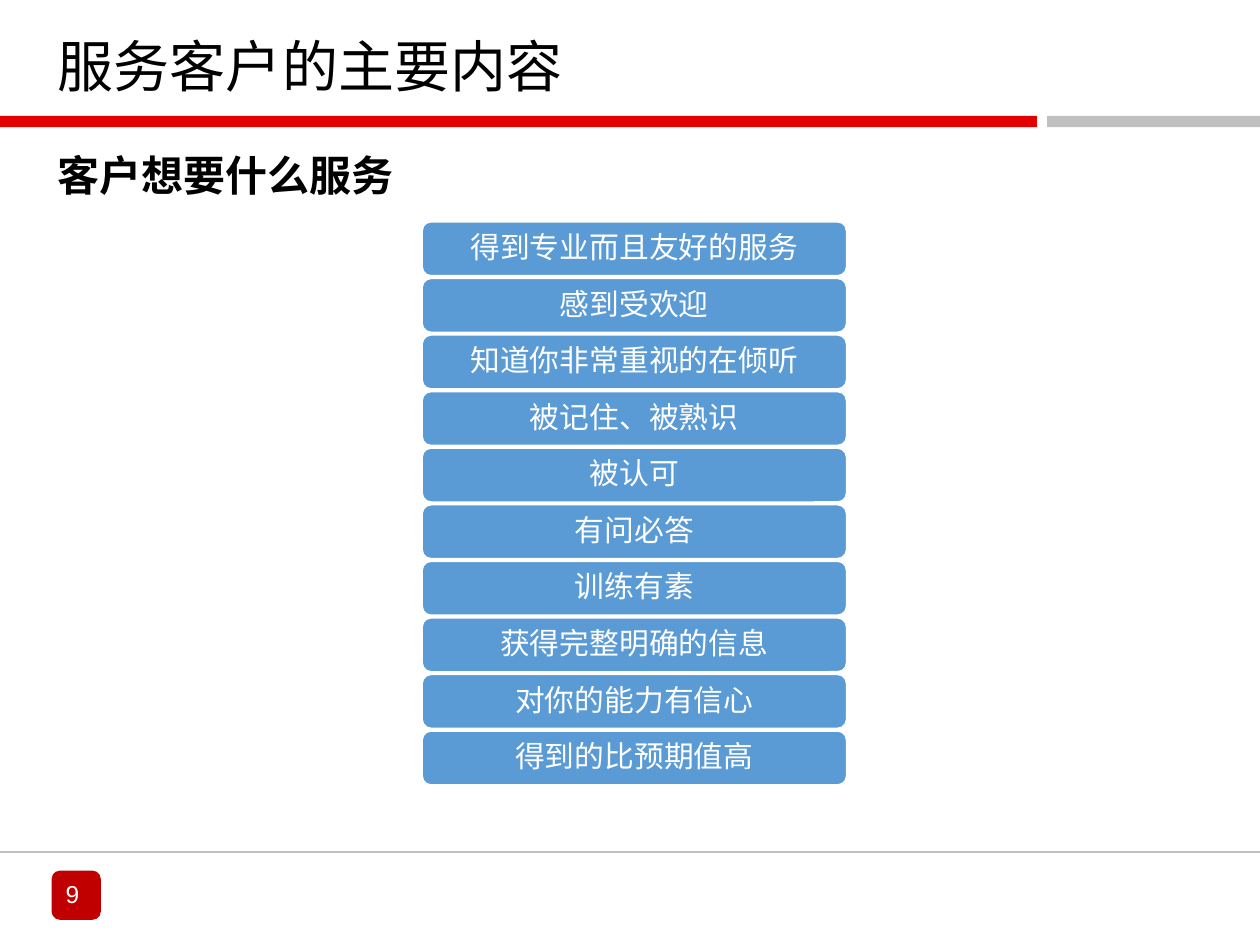
from dataclasses import dataclass

from lxml.etree import SubElement
from pptx import Presentation
from pptx.dml.color import RGBColor
from pptx.enum.shapes import MSO_CONNECTOR, MSO_SHAPE
from pptx.enum.text import MSO_ANCHOR, MSO_AUTO_SIZE, PP_ALIGN
from pptx.oxml.ns import qn
from pptx.util import Inches, Pt

BLACK = RGBColor(0x00, 0x00, 0x00)
WHITE = RGBColor(0xFF, 0xFF, 0xFF)
RED = RGBColor(0xE2, 0x00, 0x00)
DARK_RED = RGBColor(0xC0, 0x00, 0x00)
GRAY = RGBColor(0xC0, 0xC0, 0xC0)
BLUE = RGBColor(0x5B, 0x9B, 0xD5)
CJK_FONT = "Noto Sans CJK SC"

NEEDS = [
    "得到专业而且友好的服务",
    "感到受欢迎",
    "知道你非常重视的在倾听",
    "被记住、被熟识",
    "被认可",
    "有问必答",
    "训练有素",
    "获得完整明确的信息",
    "对你的能力有信心",
    "得到的比预期值高",
]
NEED_TOP, NEED_PITCH = 1.76, 0.449


@dataclass
class Box:
    left: float
    top: float
    width: float
    height: float

    def lengths(self) -> list:
        return [Inches(v) for v in (self.left, self.top, self.width, self.height)]


@dataclass
class Style:
    font: str
    size: float
    color: RGBColor
    bold: bool = False
    align: PP_ALIGN = PP_ALIGN.LEFT
    line_spacing: float = 0.9
    space_after: float = 0


TITLE = Style("Times New Roman", 32, BLACK)
SUBTITLE = Style("Times New Roman", 24, BLACK, bold=True)
NEED = Style("Calibri", 17, WHITE, align=PP_ALIGN.CENTER, space_after=6)
NUMBER = Style("Arial", 14, WHITE, align=PP_ALIGN.CENTER, line_spacing=1)


def write(tf, text: str, style: Style, anchor: MSO_ANCHOR, inset=(0.1, 0.05)) -> None:
    tf.word_wrap = True
    tf.auto_size = MSO_AUTO_SIZE.NONE
    tf.vertical_anchor = anchor
    tf.margin_left = tf.margin_right = Inches(inset[0])
    tf.margin_top = tf.margin_bottom = Inches(inset[1])
    p = tf.paragraphs[0]
    p.alignment = style.align
    p.line_spacing = style.line_spacing
    p.space_before, p.space_after = Pt(0), Pt(style.space_after)
    r = p.add_run()
    r.text = text
    r.font.name, r.font.size, r.font.bold = style.font, Pt(style.size), style.bold
    r.font.color.rgb = style.color
    SubElement(r.font._element, qn("a:ea")).set("typeface", CJK_FONT)


def add_block(slide, kind: MSO_SHAPE, box: Box, fill: RGBColor, line: RGBColor = None):
    sp = slide.shapes.add_shape(kind, *box.lengths())
    sp.shadow.inherit = False
    sp.fill.solid()
    sp.fill.fore_color.rgb = fill
    if line is None:
        sp.line.fill.background()
    else:
        sp.line.color.rgb = line
        sp.line.width = Pt(1)
    return sp


def add_rule(slide, y: float) -> None:
    line = slide.shapes.add_connector(
        MSO_CONNECTOR.STRAIGHT, Inches(0), Inches(y), Inches(10), Inches(y))
    line.line.color.rgb = GRAY
    line.line.width = Pt(1)
    SubElement(line._element.spPr, qn("a:effectLst"))


def add_text(slide, box: Box, text: str, style: Style) -> None:
    tb = slide.shapes.add_textbox(*box.lengths())
    write(tb.text_frame, text, style, MSO_ANCHOR.TOP)


def main() -> None:
    prs = Presentation()
    prs.slide_width, prs.slide_height = Inches(10), Inches(7.5)
    slide = prs.slides.add_slide(prs.slide_layouts[5])

    # Header bars and footer
    add_block(slide, MSO_SHAPE.RECTANGLE, Box(0, 0.92, 8.23, 0.09), RED)
    add_block(slide, MSO_SHAPE.RECTANGLE, Box(8.31, 0.92, 1.69, 0.09), GRAY)
    add_rule(slide, 6.76)
    add_block(slide, MSO_SHAPE.ROUNDED_RECTANGLE, Box(0.41, 6.91, 0.39, 0.39), DARK_RED)
    add_text(slide, Box(0.22, 6.93, 0.71, 0.37), "9", NUMBER)

    # Title and subtitle
    title = slide.shapes.title
    title.left, title.top, title.width, title.height = Box(0.36, 0.12, 8.25, 0.72).lengths()
    write(title.text_frame, "服务客户的主要内容", TITLE, MSO_ANCHOR.BOTTOM)
    add_text(slide, Box(0.36, 1.18, 7.5, 0.58), "客户想要什么服务", SUBTITLE)

    # Stack of customer needs
    for i, need in enumerate(NEEDS):
        box = Box(3.35, NEED_TOP + i * NEED_PITCH, 3.37, 0.43)
        sp = add_block(slide, MSO_SHAPE.ROUNDED_RECTANGLE, box, BLUE, WHITE)
        write(sp.text_frame, need, NEED, MSO_ANCHOR.MIDDLE, inset=(0.09, 0.06))

    prs.save("out.pptx")


if __name__ == "__main__":
    main()
